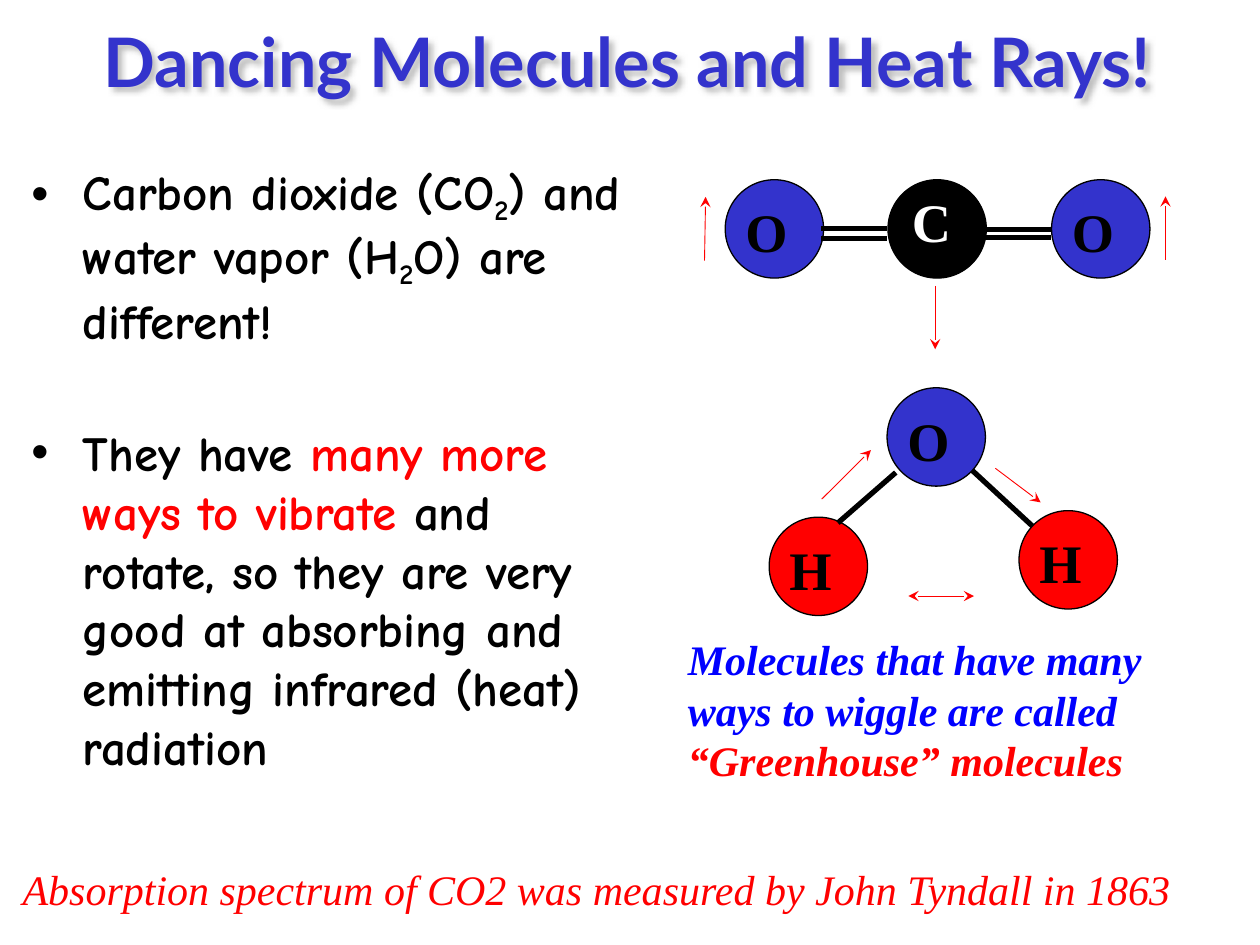
import pptx
import pptx.dml.color
import pptx.enum.shapes
import pptx.enum.text
import pptx.oxml
import pptx.oxml.ns
import pptx.util
from lxml import etree

Pt = pptx.util.Pt
RGBColor = pptx.dml.color.RGBColor
ALIGN = pptx.enum.text.PP_ALIGN
ANCHOR = pptx.enum.text.MSO_ANCHOR
INDIGO = RGBColor(0x33, 0x33, 0xCC)
BLUE = RGBColor(0x00, 0x00, 0xFF)
RED = RGBColor(0xFF, 0x00, 0x00)
BLACK = RGBColor(0x00, 0x00, 0x00)
WHITE = RGBColor(0xFF, 0xFF, 0xFF)
SERIF, HAND, SANS = "Times New Roman", "Comic Neue", "Lato"
DIAMETER = 56.2
LABEL_SIZE = (40.3, 38.9)
FRAME_INSETS = (7.2, 3.6, 9.4, 3.6)
CAPTION_INSETS = (0, 0, 2.9, 0)
LABEL_INSETS = (2.9, 2.9, 7.2, 2.9)


def element(parent, tag, **attributes):
    """Append a DrawingML child element and return it."""
    child = etree.SubElement(parent, pptx.oxml.ns.qn("a:" + tag))
    for name, value in attributes.items():
        child.set(name, str(value))
    return child


class MoleculeSlide:
    """Draws text, atoms, bonds and motion arrows on one slide."""

    def __init__(self, slide):
        self.slide = slide

    def text(self, box, paragraphs, font, size, insets, shapes=None, bold=False,
             italic=False, align=ALIGN.LEFT, anchor=ANCHOR.TOP, indent=(2.9, 0),
             bullet=None, before=0, wrap=True):
        """Add a text box whose paragraphs are lists of (text, colour, baseline)."""
        holder = (shapes or self.slide.shapes).add_textbox(*map(Pt, box))
        frame = holder.text_frame
        frame.word_wrap = wrap
        frame.vertical_anchor = anchor
        (frame.margin_left, frame.margin_top,
         frame.margin_right, frame.margin_bottom) = map(Pt, insets)
        for index, pieces in enumerate(paragraphs):
            paragraph = frame.add_paragraph() if index else frame.paragraphs[0]
            paragraph.alignment = align
            paragraph.space_before = Pt(before if index else 0)
            properties = paragraph._p.get_or_add_pPr()
            properties.set("marL", str(Pt(indent[0])))
            properties.set("indent", str(Pt(indent[1])))
            if bullet:
                element(element(properties, "buClr"), "srgbClr", val=BLACK)
                element(properties, "buFont", typeface="Arial")
                element(properties, "buChar", char=bullet)
            paragraph.font.name, paragraph.font.size = font, Pt(size)
            for words, colour, baseline in pieces:
                run = paragraph.add_run()
                run.text = words.rstrip("\n")
                run.font.name, run.font.size = font, Pt(size)
                run.font.bold, run.font.italic = bold, italic
                run.font.color.rgb = colour
                if baseline:
                    run.font._element.set("baseline", str(baseline * 1000))
                if words.endswith("\n"):
                    paragraph.add_line_break()
                    line_break = paragraph._p[-1]
                    element(line_break, "rPr", sz=size * 100)
        return holder

    def title(self, box, words):
        """Add the centred heading with its soft text shadow."""
        heading = self.text(box, [[(words, INDIGO, 0)]], SANS, 39, FRAME_INSETS,
                            bold=True, align=ALIGN.CENTER, anchor=ANCHOR.MIDDLE)
        effects = element(heading._element.spPr, "effectLst")
        shadow = element(effects, "outerShdw", blurRad=Pt(3), dist=Pt(3), dir=2700000)
        element(element(shadow, "srgbClr", val="808080"), "alpha", val=50000)

    def atom(self, symbol, left, top, fill, colour=BLACK, offset=(8, 8)):
        """Add a filled circle grouped with its chemical symbol."""
        group = self.slide.shapes.add_group_shape()
        circle = group.shapes.add_shape(
            pptx.enum.shapes.MSO_SHAPE.OVAL,
            Pt(left), Pt(top), Pt(DIAMETER), Pt(DIAMETER))
        circle.shadow.inherit = False
        circle.fill.solid()
        circle.fill.fore_color.rgb = fill
        circle.line.color.rgb = BLACK
        circle.line.width = Pt(0.75)
        self.text((left + offset[0], top + offset[1], *LABEL_SIZE),
                  [[(symbol, colour, 0)]], SERIF, 31, LABEL_INSETS,
                  shapes=group.shapes, bold=True, indent=(0.7, 0))

    def line(self, ends, colour, width):
        """Add a straight connector without a shadow."""
        connector = self.slide.shapes.add_connector(
            pptx.enum.shapes.MSO_CONNECTOR.STRAIGHT, *map(Pt, ends))
        connector.line.color.rgb = colour
        connector.line.width = Pt(width)
        element(connector._element.spPr, "effectLst")
        return connector

    def bond(self, *ends):
        """Add a chemical bond."""
        self.line(ends, BLACK, 3)

    def motion(self, *ends, both=False):
        """Add a red vibration arrow pointing at its end, or both ways."""
        outline = self.line(ends, RED, 0.5).line._get_or_add_ln()
        if both:
            element(outline, "headEnd", type="stealth")
        element(outline, "tailEnd", type="stealth")


def main():
    """Build the greenhouse molecule slide."""
    deck = pptx.Presentation()
    deck.slide_width, deck.slide_height = Pt(720), Pt(540)
    page = MoleculeSlide(deck.slides.add_slide(deck.slide_layouts[6]))

    page.bond(535, 249.8, 610.6, 319.7)
    page.title((10, 0, 696.2, 69.1), "Dancing Molecules and Heat Rays!")
    page.text((8.6, 88.6, 356.4, 451.4), [
        [("Carbon dioxide (CO", BLACK, 0), ("2", BLACK, -20),
         (") and water vapor (H", BLACK, 0), ("2", BLACK, -20),
         ("O) are different!\n", BLACK, 0)],
        [("They have ", BLACK, 0), ("many more ways to vibrate ", RED, 0),
         ("and rotate, so they are very good at absorbing and emitting "
          "infrared (heat) radiation", BLACK, 0)],
    ], HAND, 28, FRAME_INSETS, bold=True, indent=(31.7, -29.5), bullet="•", before=8.4)
    page.text((390.2, 362.2, 301, 85), [
        [("Molecules that have many ways to wiggle are called ", BLUE, 0),
         ("“Greenhouse” molecules", RED, 0)],
    ], SERIF, 24, CAPTION_INSETS, bold=True, italic=True)

    page.atom("O", 414.4, 102.7, INDIGO)
    page.atom("O", 600.9, 102.7, INDIGO)
    page.atom("C", 507.4, 102.7, BLACK, WHITE, offset=(10.1, 2.2))
    page.atom("H", 439.5, 295.5, RED)
    page.atom("H", 582.3, 291.8, RED)
    page.atom("O", 506.9, 221.6, INDIGO)

    for left, right, upper, lower in ((469.2, 506.6, 130.4, 136.5),
                                      (563, 600.8, 131, 135.8)):
        for height in (upper, lower):
            page.bond(left, height, right, height)
    page.bond(478.8, 298.8, 511.9, 270)

    page.motion(519.1, 340.6, 556.6, 340.6, both=True)
    page.motion(402.6, 149, 403.2, 112.5)
    page.motion(666, 148.5, 666, 112.2)
    page.motion(534.4, 163.4, 534.4, 199.6)
    page.motion(469.6, 285.2, 497.7, 257.2)
    page.motion(568.8, 267.6, 594.7, 287.1)

    page.text((10, 493.2, 674.6, 28.8), [
        [("Absorption spectrum of CO2 was measured by John Tyndall in 1863", RED, 0)],
    ], SERIF, 24, CAPTION_INSETS, italic=True, wrap=False)
    deck.save("out.pptx")


if __name__ == "__main__":
    main()
